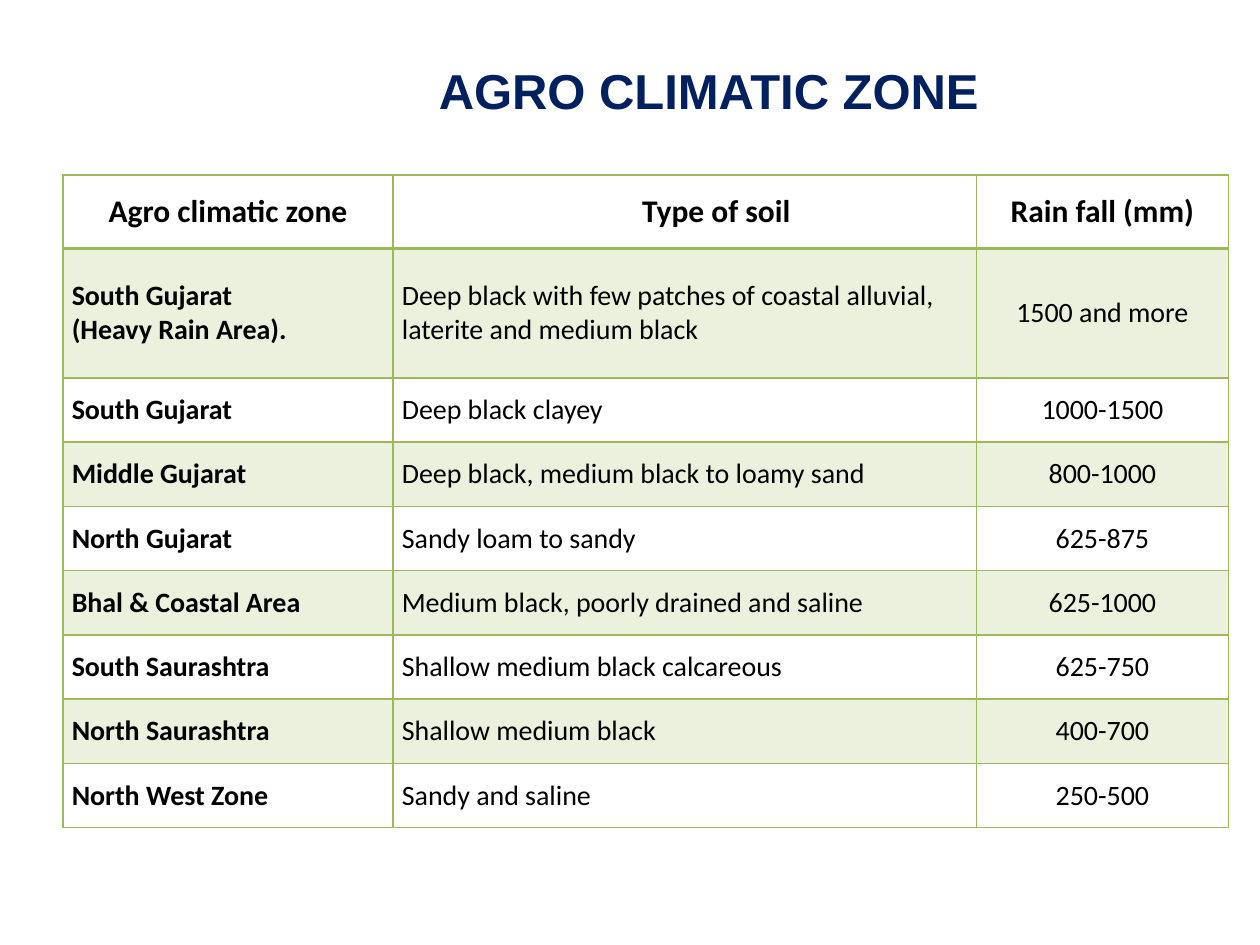
from typing import NamedTuple

from lxml import etree
from pptx import Presentation
from pptx.dml.color import RGBColor
from pptx.enum.text import MSO_ANCHOR, MSO_AUTO_SIZE, PP_ALIGN
from pptx.oxml.ns import qn
from pptx.util import Inches, Pt

CENTER, LEFT = PP_ALIGN.CENTER, PP_ALIGN.LEFT
MIDDLE = MSO_ANCHOR.MIDDLE
FIT_SHAPE = MSO_AUTO_SIZE.SHAPE_TO_FIT_TEXT

COLORS = {"title": "002060", "text": "000000", "green": "9BBB59"}
BAND_ALPHA = 20000
COLUMN_WIDTHS = (2.62, 4.63, 2.0)
HEADER_HEIGHT, TALL_HEIGHT, ROW_HEIGHT = 0.58, 1.03, 0.51
SIDE_MARGIN = Inches(0.07)


class Zone(NamedTuple):
    name: str
    soil: str
    rainfall: str


HEADER = Zone("Agro climatic zone", "Type of soil", "Rain fall (mm)")
ZONES = [
    Zone("South Gujarat\n(Heavy Rain Area).",
         "Deep black with few patches of coastal alluvial, laterite and medium black",
         "1500 and more"),
    Zone("South Gujarat", "Deep black clayey", "1000-1500"),
    Zone("Middle Gujarat", "Deep black, medium black to loamy sand", "800-1000"),
    Zone("North Gujarat", "Sandy loam to sandy", "625-875"),
    Zone("Bhal & Coastal Area", "Medium black, poorly drained and saline", "625-1000"),
    Zone("South Saurashtra", "Shallow medium black calcareous", "625-750"),
    Zone("North Saurashtra", "Shallow medium black", "400-700"),
    Zone("North West Zone", "Sandy and saline", "250-500"),
]


def write_text(frame, text: str, *, size: float, font: str = "Calibri",
               color: str = "text", bold: bool = False, align=LEFT) -> None:
    """Fill a text frame, with one paragraph for each line of the text."""
    frame.text = text
    for para in frame.paragraphs:
        para.alignment = align
        for span in para.runs:
            span.font.name = font
            span.font.size = Pt(size)
            span.font.bold = bold
            span.font.color.rgb = RGBColor.from_string(COLORS[color])


def set_borders(cell, bottom_width: float) -> None:
    """Add the four border lines, which must precede the fill in the cell properties."""
    properties = cell._tc.get_or_add_tcPr()
    widths = {"a:lnL": 1, "a:lnR": 1, "a:lnT": 1, "a:lnB": bottom_width}
    for position, (tag, width) in enumerate(widths.items()):
        line = etree.Element(qn(tag), w=str(Pt(width)))
        fill = etree.SubElement(line, qn("a:solidFill"))
        etree.SubElement(fill, qn("a:srgbClr"), val=COLORS["green"])
        properties.insert(position, line)


def set_band(cell, banded: bool) -> None:
    if not banded:
        cell.fill.background()
        return
    cell.fill.solid()
    cell.fill.fore_color.rgb = RGBColor.from_string(COLORS["green"])
    color = cell._tc.tcPr.find(qn("a:solidFill")).find(qn("a:srgbClr"))
    etree.SubElement(color, qn("a:alpha"), val=str(BAND_ALPHA))


def add_title(page, text: str) -> None:
    box = page.shapes.add_textbox(Inches(1.25), Inches(0.43), Inches(8.75), Inches(0.57))
    box.text_frame.word_wrap = True
    box.text_frame.auto_size = FIT_SHAPE
    write_text(box.text_frame, text, size=28, font="Arial", color="title",
               bold=True, align=CENTER)


def add_zone_table(page) -> None:
    rows = [HEADER, *ZONES]
    heights = [HEADER_HEIGHT, TALL_HEIGHT] + [ROW_HEIGHT] * (len(ZONES) - 1)
    table = page.shapes.add_table(
        len(rows), len(COLUMN_WIDTHS), Inches(0.5), Inches(1.39),
        Inches(sum(COLUMN_WIDTHS)), Inches(sum(heights))).table
    table.horz_banding = False
    for column, width in zip(table.columns, COLUMN_WIDTHS):
        column.width = Inches(width)
    for row_index, (zone, height) in enumerate(zip(rows, heights)):
        table.rows[row_index].height = Inches(height)
        is_header = row_index == 0
        # The header's bottom line is also the first zone's top line.
        for column_index, text in enumerate(zone):
            cell = table.cell(row_index, column_index)
            cell.vertical_anchor = MIDDLE
            cell.margin_left = cell.margin_right = SIDE_MARGIN
            cell.margin_top = cell.margin_bottom = 0
            set_band(cell, banded=row_index % 2 == 1)
            set_borders(cell, bottom_width=2 if is_header else 1)
            if row_index == 1:
                cell._tc.tcPr.find(qn("a:lnT")).set("w", str(Pt(2)))
            write_text(cell.text_frame, text, size=18 if is_header else 16,
                       bold=is_header or column_index == 0,
                       align=CENTER if is_header or column_index == 2 else LEFT)
    soil_heading = table.cell(0, 1).text_frame.paragraphs[0]
    soil_heading._p.get_or_add_pPr().set("marL", str(Inches(0.5)))


def main() -> None:
    deck = Presentation()
    deck.slide_width, deck.slide_height = Inches(10), Inches(7.5)
    page = deck.slides.add_slide(deck.slide_layouts[6])
    add_zone_table(page)
    add_title(page, "AGRO CLIMATIC ZONE")
    deck.save("out.pptx")


if __name__ == "__main__":
    main()
